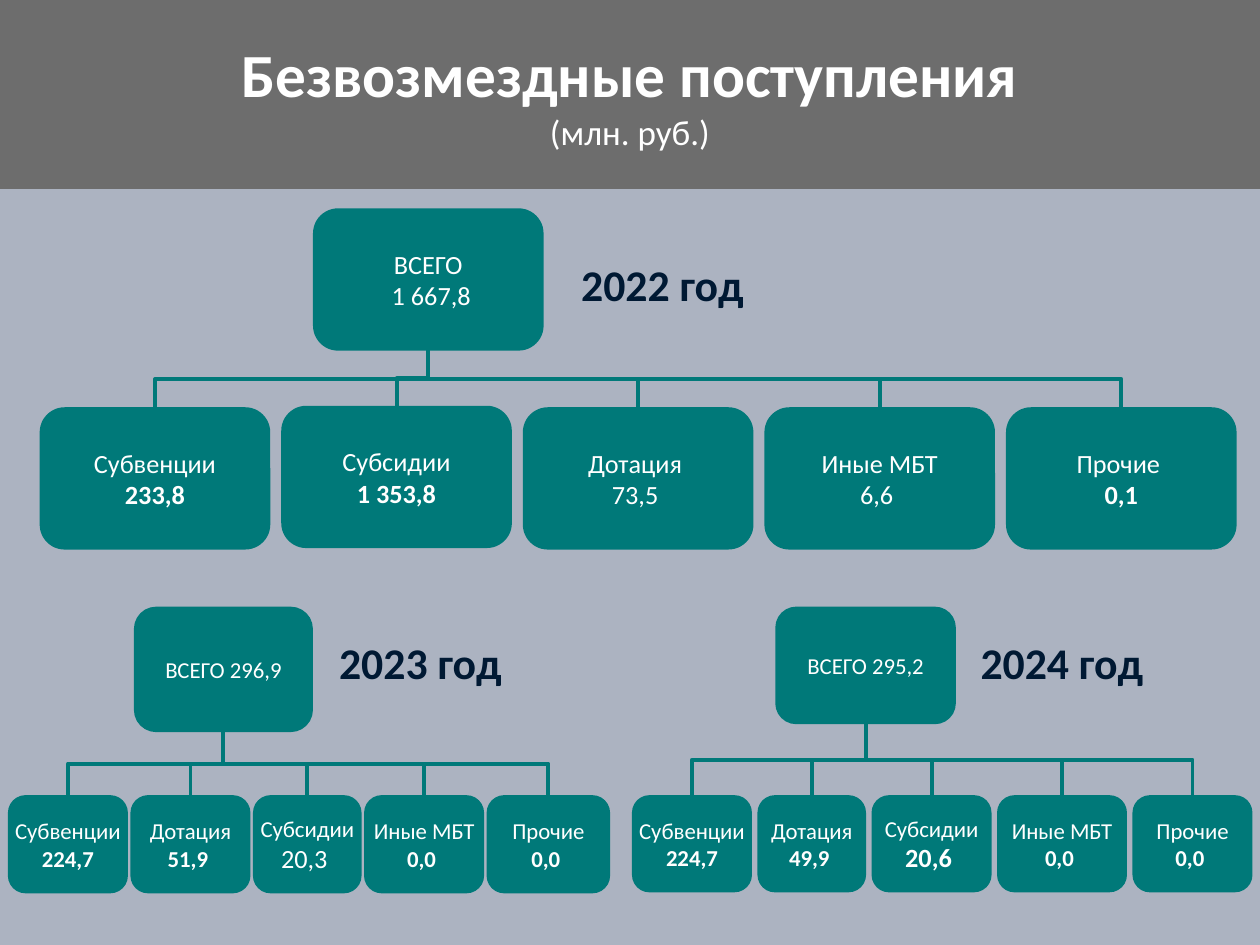
from dataclasses import dataclass

from lxml import etree
from pptx import Presentation
from pptx.dml.color import RGBColor
from pptx.enum import shapes, text
from pptx.oxml import ns
from pptx.util import Cm, Pt


@dataclass(frozen=True)
class Theme:
    font: str = "Calibri"
    background: RGBColor = RGBColor(0xAC, 0xB3, 0xC1)
    header: RGBColor = RGBColor(0x6D, 0x6D, 0x6D)
    box: RGBColor = RGBColor(0x00, 0x79, 0x79)
    light: RGBColor = RGBColor(0xFF, 0xFF, 0xFF)
    dark: RGBColor = RGBColor(0x00, 0x19, 0x33)
    title: int = 35
    unit: int = 20
    year: int = 25
    large: int = 15
    small: int = 13
    line: float = 2.25


THEME = Theme()


@dataclass(frozen=True)
class Item:
    """One kind of receipt; width and drop (shift downwards) are in cm."""
    label: str
    value: str
    width: float
    bold: bool = True
    size: int = THEME.small
    drop: float = 0


def write_lines(frame, lines, color, align=text.PP_ALIGN.CENTER):
    """Fill a text frame with (text, size, bold) lines."""
    for index, (words, size, bold) in enumerate(lines):
        paragraph = frame.paragraphs[0] if index == 0 else frame.add_paragraph()
        paragraph.text = words
        paragraph.alignment = align
        paragraph.font.name = THEME.font
        paragraph.font.size = Pt(size)
        paragraph.font.bold = bold
        paragraph.font.color.rgb = color


def add_filled(slide, kind, box, fill, lines):
    shape = slide.shapes.add_shape(kind, *map(Cm, box))
    shape.shadow.inherit = False
    shape.fill.solid()
    shape.fill.fore_color.rgb = fill
    shape.line.fill.background()
    shape.text_frame.vertical_anchor = text.MSO_ANCHOR.MIDDLE
    write_lines(shape.text_frame, lines, THEME.light)
    return shape


def add_node(slide, box, lines):
    node = add_filled(slide, shapes.MSO_SHAPE.ROUNDED_RECTANGLE, box, THEME.box, lines)
    node.line.color.rgb = THEME.box
    node.line.width = Pt(THEME.line)
    frame = node.text_frame
    frame.margin_left = frame.margin_right = frame.margin_top = frame.margin_bottom = 0
    frame.word_wrap = False
    return node


def add_branch(slide, parent, child):
    """Join parent bottom to child top by an elbow that starts downwards."""
    start_x, start_y = parent.left + parent.width // 2, parent.top + parent.height
    end_x, end_y = child.left + child.width // 2, child.top
    branch = slide.shapes.add_connector(
        shapes.MSO_CONNECTOR.ELBOW, start_x, start_y, end_x, end_y)
    branch.begin_connect(parent, 2)
    branch.end_connect(child, 0)
    branch.line.color.rgb = THEME.box
    branch.line.width = Pt(THEME.line)
    properties = branch.element.spPr
    etree.SubElement(properties, ns.qn("a:effectLst"))

    # The preset elbow runs sideways: turn it by a quarter about its centre.
    length, spread = end_y - start_y, abs(end_x - start_x)
    branch.left = (start_x + end_x - length) // 2
    branch.top = (start_y + end_y - spread) // 2
    branch.width, branch.height = length, spread
    transform = properties.find(ns.qn("a:xfrm"))
    to_right = end_x > start_x
    transform.set("rot", str((270 if to_right else 90) * 60000))
    transform.set("flipH", "1" if to_right else "0")
    transform.set("flipV", "0")


def add_header(slide, box):
    add_filled(slide, shapes.MSO_SHAPE.RECTANGLE, box, THEME.header, [
        ("Безвозмездные поступления", THEME.title, True),
        ("(млн. руб.)", THEME.unit, False),
    ])


def add_year(slide, left, top, year):
    label = slide.shapes.add_textbox(Cm(left), Cm(top), Cm(3.81), Cm(1.32))
    label.text_frame.word_wrap = True
    write_lines(label.text_frame, [(f"{year} год", THEME.year, True)],
                THEME.dark, text.PP_ALIGN.RIGHT)


def add_tree(slide, box, year, year_offset, total_box, total_lines, items, child_height, gap):
    """Total above a row of items; offsets are relative to the box."""
    left, top, _, height = box
    total_left, total_top, *total_size = total_box
    total = add_node(slide, (left + total_left, top + total_top, *total_size), total_lines)
    add_year(slide, left + year_offset[0], top + year_offset[1], year)
    for item in items:
        child_top = top + height - child_height + item.drop
        child = add_node(slide, (left, child_top, item.width, child_height), [
            (item.label, total_lines[0][1], False),
            (item.value, item.size, item.bold),
        ])
        add_branch(slide, total, child)
        left += item.width + gap


def main():
    presentation = Presentation()
    presentation.slide_width, presentation.slide_height = Cm(25.4), Cm(19.05)
    slide = presentation.slides.add_slide(presentation.slide_layouts[6])
    slide.background.fill.solid()
    slide.background.fill.fore_color.rgb = THEME.background

    add_header(slide, (0, 0, 25.4, 3.81))
    large, small = THEME.large, THEME.small
    add_tree(
        slide, (0.84, 4.24, 24.05, 6.8), 2022, (10.59, 0.84), (5.51, 0, 4.57, 2.79),
        [("ВСЕГО", large, False), (" 1 667,8", large, False)],
        [Item("Субвенции", "233,8", 4.57, size=large),
         Item("Субсидии", "1 353,8", 4.57, size=large, drop=-0.03),
         Item("Дотация ", "73,5 ", 4.57, False, large),
         Item("Иные МБТ", "6,6 ", 4.57, False, large),
         Item("Прочие ", "0,1", 4.57, size=large)],
        child_height=2.79, gap=0.3)
    add_tree(
        slide, (0.2, 12.27, 12.06, 5.7), 2023, (6.35, 0.43), (2.54, 0, 3.53, 2.45),
        [("ВСЕГО 296,9", small, False)],
        [Item("Субвенции", "224,7", 2.34),
         Item("Дотация", "51,9 ", 2.34),
         Item("Субсидии", "20,3 ", 2.11, False, large),
         Item("Иные МБТ", "0,0 ", 2.34),
         Item("Прочие", "0,0 ", 2.41)],
        child_height=1.9, gap=0.13)
    add_tree(
        slide, (12.78, 12.27, 12.43, 5.68), 2024, (6.7, 0.43), (2.89, 0, 3.56, 2.29),
        [("ВСЕГО 295,2", small, False)],
        [Item("Субвенции", "224,7", 2.34),
         Item("Дотация", "49,9 ", 2.11),
         Item("Субсидии", "20,6 ", 2.34, size=large),
         Item("Иные МБТ", "0,0 ", 2.54),
         Item("Прочие", "0,0 ", 2.34)],
        child_height=1.88, gap=0.19)
    presentation.save("out.pptx")


if __name__ == "__main__":
    main()
